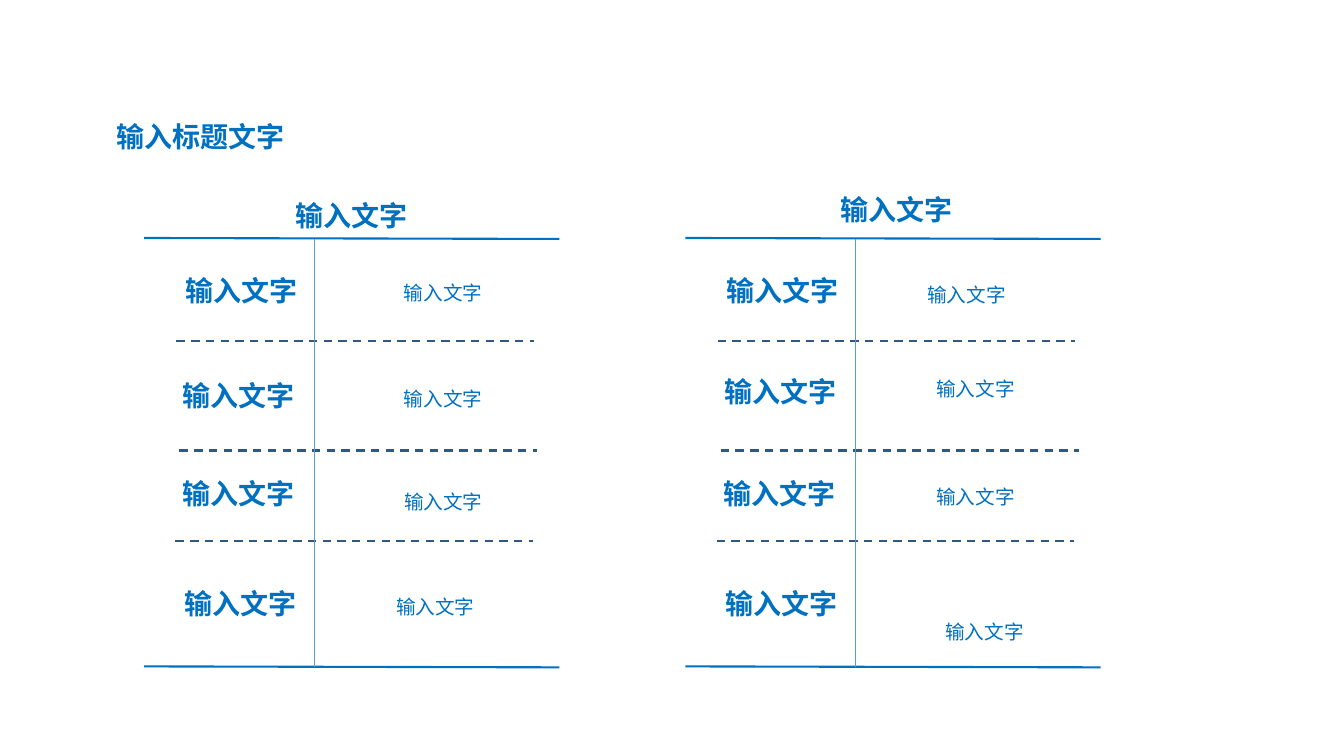
import pptx
import pptx.dml.color
import pptx.enum.dml
import pptx.enum.shapes
import pptx.enum.text
import pptx.oxml.ns
import pptx.util
import lxml.etree

Pt = pptx.util.Pt
COLORS = {"blue": "0070C0", "dash": "31597F", "divider": "5B9BD5"}
FONT = "Noto Sans CJK SC"
HEADING = {"size": Pt(20), "bold": True, "name": FONT}
DETAIL = {"size": Pt(14), "bold": False, "name": FONT}
LABEL_SIZE = (94.3, 31.7)
DETAIL_HEIGHT = 29.5
TITLE, ENTRY = "输入标题文字", "输入文字"

PANELS = [
    {
        "box": (103, 170, 296.6, 306.7),
        "heading": (100.8, -31.8),
        "labels": [(22.3, 21.5), (20.2, 97.1), (20.2, 167), (21.6, 245.4)],
        "details": [(178.5, 22.2, 152), (178.5, 97.8, 127.4),
                    (178.5, 171.3, 128.2), (172.8, 246.2, 138.2)],
    },
    {
        "box": (489.6, 170, 296.6, 306.7),
        "heading": (103.7, -36.1),
        "labels": [(22.3, 21.5), (20.9, 94.2), (20.2, 167), (21.6, 245.4)],
        "details": [(165.6, 23.7, 152), (172.1, 90.6, 124.6),
                    (172.1, 167.7, 113), (178.6, 264.2, 218.2)],
    },
]
SEPARATORS = [(23, 73.4), (25.2, 151.8), (22.3, 216.6)]
SEPARATOR_LENGTH = 255.6
DIVIDER_X = 121.7
RULE_DROP = 0.7


def add_text(slide, box, text, formats, wrap=True, spacing=None):
    """Place one line of blue text in the given box."""
    frame = slide.shapes.add_textbox(*map(Pt, box)).text_frame
    frame.word_wrap = wrap
    frame.auto_size = pptx.enum.text.MSO_AUTO_SIZE.SHAPE_TO_FIT_TEXT
    paragraph = frame.paragraphs[0]
    paragraph.line_spacing = spacing
    run = paragraph.add_run()
    run.text = text
    for attribute, value in formats.items():
        setattr(run.font, attribute, value)
    run.font.color.rgb = pptx.dml.color.RGBColor.from_string(COLORS["blue"])
    east_asian = lxml.etree.SubElement(run._r.get_or_add_rPr(), pptx.oxml.ns.qn("a:ea"))
    east_asian.set("typeface", FONT)


def add_line(slide, start, end, color, width, dash=None):
    """Draw a straight line between two points."""
    line = slide.shapes.add_connector(
        pptx.enum.shapes.MSO_CONNECTOR.STRAIGHT, *map(Pt, (*start, *end)))
    line.line.color.rgb = pptx.dml.color.RGBColor.from_string(COLORS[color])
    for attribute, value in {"width": Pt(width), "dash_style": dash}.items():
        setattr(line.line, attribute, value)
    lxml.etree.SubElement(line._element.spPr, pptx.oxml.ns.qn("a:effectLst"))


def add_title(slide, box):
    """Write the slide title."""
    add_text(slide, box, TITLE, HEADING)


def add_panel(slide, box, heading, labels, details):
    """Draw one ruled panel with its heading, row labels and details."""
    left, top, width, height = box
    for y in (top, top + height - RULE_DROP):
        add_line(slide, (left, y), (left + width, y + RULE_DROP), "blue", 1.5)
    for x, y in SEPARATORS:
        add_line(slide, (left + x, top + y), (left + x + SEPARATOR_LENGTH, top + y),
                 "dash", 1.5, pptx.enum.dml.MSO_LINE.DASH)
    add_line(slide, (left + DIVIDER_X, top + RULE_DROP),
             (left + DIVIDER_X, top + height), "divider", 0.5)
    for x, y in [heading, *labels]:
        add_text(slide, (left + x, top + y, *LABEL_SIZE), ENTRY, HEADING, wrap=False)
    for x, y, detail_width in details:
        add_text(slide, (left + x, top + y, detail_width, DETAIL_HEIGHT),
                 ENTRY, DETAIL, spacing=1.3)


def main():
    """Build and save the slide."""
    presentation = pptx.Presentation()
    presentation.slide_width, presentation.slide_height = Pt(960), Pt(540)
    slide = presentation.slides.add_slide(presentation.slide_layouts[6])
    add_title(slide, (76.3, 82.1, 455, 31.7))
    for panel in PANELS:
        add_panel(slide, **panel)
    presentation.save("out.pptx")


if __name__ == "__main__":
    main()
